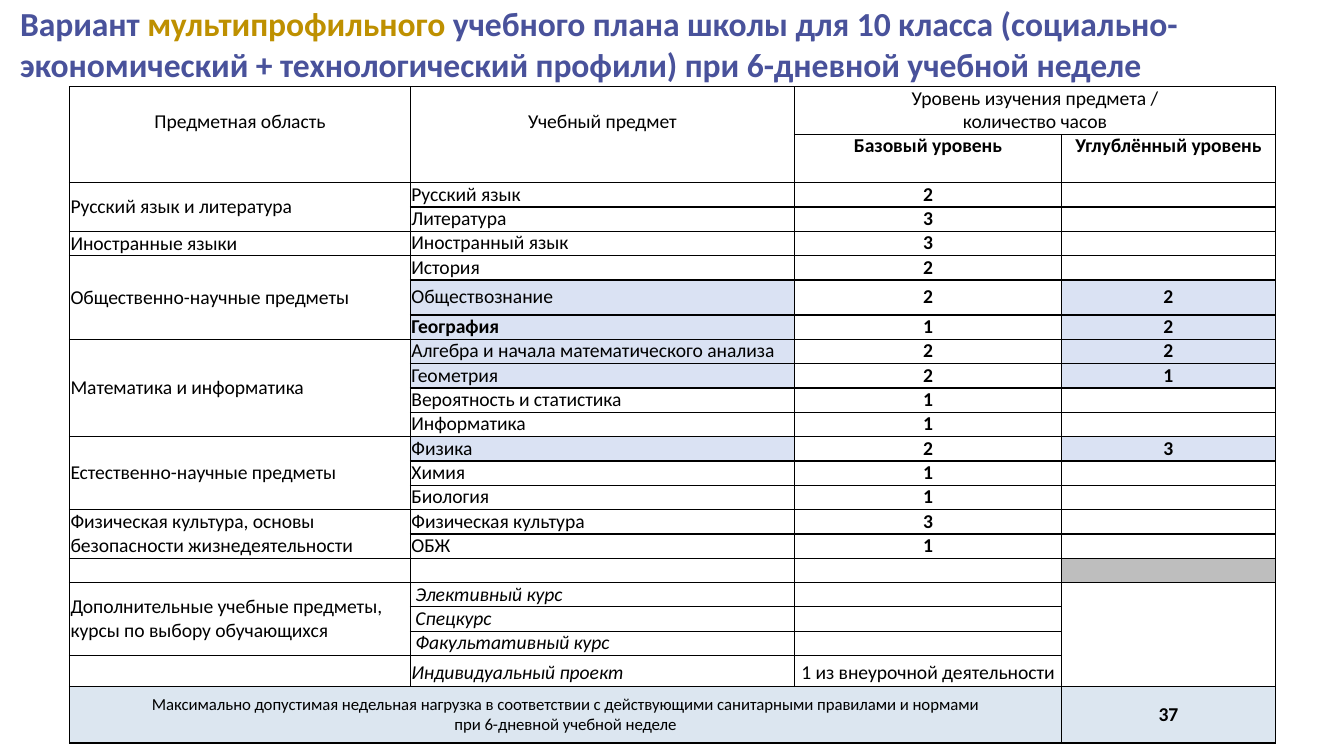
import pptx
import pptx.dml.color
import pptx.enum.text
import pptx.oxml
import pptx.oxml.ns
import pptx.util
from lxml import etree

Pt = pptx.util.Pt
ALIGN = pptx.enum.text.PP_ALIGN
ANCHOR = pptx.enum.text.MSO_ANCHOR
qn = pptx.oxml.ns.qn

# Content
FONT = "Calibri"
COLORS = {"title": "49529B", "accent": "BE9000", "text": "000000", "border": "000000",
          "advanced": "DAE2F3", "blocked": "BEBEBE", "total": "DCE6F0"}
TITLE = [
    [("Вариант ", "title"), ("мультипрофильного ", "accent"),
     ("учебного плана школы для 10 класса (социально-", "title")],
    [("экономический + технологический профили) при 6-дневной учебной неделе", "title")],
]
AREA_HEADER = "Предметная область"
SUBJECT_HEADER = "Учебный предмет"
LEVEL_HEADER = "Уровень изучения предмета /\nколичество часов"
LEVELS = ["Базовый уровень", "Углублённый уровень"]
# Area, then its subjects with basic and advanced hours
AREAS = [
    ("Русский язык и литература", [("Русский язык", "2", ""), ("Литература", "3", "")]),
    ("Иностранные языки", [("Иностранный язык", "3", "")]),
    ("Общественно-научные предметы", [
        ("История", "2", ""), ("Обществознание", "2", "2"), ("География", "1", "2")]),
    ("Математика и информатика", [
        ("Алгебра и начала математического анализа", "2", "2"), ("Геометрия", "2", "1"),
        ("Вероятность и статистика", "1", ""), ("Информатика", "1", "")]),
    ("Естественно-научные предметы", [
        ("Физика", "2", "3"), ("Химия", "1", ""), ("Биология", "1", "")]),
    ("Физическая культура, основы\nбезопасности жизнедеятельности", [
        ("Физическая культура", "3", ""), ("ОБЖ", "1", "")]),
]
BOLD_SUBJECTS = {"География"}
ELECTIVE_AREA = "Дополнительные учебные предметы,\nкурсы по выбору обучающихся"
ELECTIVES = ["Элективный курс", "Спецкурс", "Факультативный курс"]
PROJECT = ("Индивидуальный проект", "1 из внеурочной деятельности")
TOTAL = ("Максимально допустимая недельная нагрузка в соответствии с действующими "
         "санитарными правилами и нормами\vпри 6-дневной учебной неделе", "37")

# Layout
TABLE_LEFT, TABLE_TOP = 49.7, 61.9
COLUMN_WIDTHS = [243.5, 274.3, 190.8, 152.7]
ROW_HEIGHT, HEADER_HEIGHT = 17.4, 34.3
TALL_ROWS = {"Обществознание": 25}
PROJECT_HEIGHT, TOTAL_HEIGHT = 22, 40.5

row_heights = [HEADER_HEIGHT] * 2
for area, subjects in AREAS:
    row_heights += [TALL_ROWS.get(name, ROW_HEIGHT) for name, basic, advanced in subjects]
row_heights += [ROW_HEIGHT] * (1 + len(ELECTIVES)) + [PROJECT_HEIGHT, TOTAL_HEIGHT]


def color(name):
    return pptx.dml.color.RGBColor.from_string(COLORS[name])


def format_run(run, size, color_name="text", bold=False, italic=False):
    font = run.font
    font.name, font.size, font.bold, font.italic = FONT, Pt(size), bold, italic
    font.color.rgb = color(color_name)
    run._r.get_or_add_rPr().set("spc", "-5")


def write(row, column, text, align=ALIGN.LEFT, anchor=ANCHOR.MIDDLE, left=0.7, top=0,
          size=14, bold=False, italic=False, line=None):
    cell = table.cell(row, column)
    cell.margin_left, cell.margin_top = Pt(left), Pt(top)
    cell.vertical_anchor = anchor
    cell.text_frame.text = text
    for paragraph in cell.text_frame.paragraphs:
        paragraph.alignment = align
        if line:
            paragraph.line_spacing = Pt(line)
        for run in paragraph.runs:
            format_run(run, size, bold=bold, italic=italic)


def write_centered(row, column, text, **options):
    write(row, column, text, align=ALIGN.CENTER, left=0, **options)


def shade(row, column, color_name):
    fill = table.cell(row, column).fill
    fill.solid()
    fill.fore_color.rgb = color(color_name)


def merge(row, column, last_row, last_column):
    table.cell(row, column).merge(table.cell(last_row, last_column))


def prepare(cell):
    """Clear the fill and margins, draw the borders, keep empty text small."""
    cell.margin_left = cell.margin_right = cell.margin_top = cell.margin_bottom = 0
    properties = cell._tc.get_or_add_tcPr()
    for side in ("a:lnL", "a:lnR", "a:lnT", "a:lnB"):
        border = etree.SubElement(properties, qn(side), w=str(Pt(1)))
        fill = etree.SubElement(border, qn("a:solidFill"))
        etree.SubElement(fill, qn("a:srgbClr"), val=COLORS["border"])
    cell.fill.background()
    etree.SubElement(cell.text_frame.paragraphs[0]._p, qn("a:endParaRPr"), sz="1200")


presentation = pptx.Presentation()
presentation.slide_width, presentation.slide_height = Pt(960), Pt(540)
slide = presentation.slides.add_slide(presentation.slide_layouts[6])

# Title
title = slide.shapes.add_textbox(Pt(13.7), Pt(0.7), Pt(836), Pt(60)).text_frame
title.word_wrap = True
title.margin_left, title.margin_top = Pt(0.7), Pt(1.5)
title.margin_right = title.margin_bottom = 0
for index, pieces in enumerate(TITLE):
    paragraph = title.add_paragraph() if index else title.paragraphs[0]
    for text, color_name in pieces:
        run = paragraph.add_run()
        run.text = text
        format_run(run, 24, color_name, bold=True)

# Table grid
table = slide.shapes.add_table(
    len(row_heights), len(COLUMN_WIDTHS), Pt(TABLE_LEFT), Pt(TABLE_TOP),
    Pt(sum(COLUMN_WIDTHS)), Pt(sum(row_heights))).table
table.first_row = table.horz_banding = False
for column, width in zip(table.columns, COLUMN_WIDTHS):
    column.width = Pt(width)
for row, height in zip(table.rows, row_heights):
    row.height = Pt(height)
for cell in table.iter_cells():
    prepare(cell)

# Header
for column, text in enumerate([AREA_HEADER, SUBJECT_HEADER]):
    merge(0, column, 1, column)
    write_centered(0, column, text, anchor=ANCHOR.TOP, top=16.5)
merge(0, 2, 0, 3)
write_centered(0, 2, LEVEL_HEADER, line=16.5)
for column, text in enumerate(LEVELS, start=2):
    write_centered(1, column, text, anchor=ANCHOR.TOP, bold=True, line=16.4)

# Subjects grouped by area
row = 2
for area, subjects in AREAS:
    if len(subjects) > 1:
        merge(row, 0, row + len(subjects) - 1, 0)
    write(row, 0, area)
    for name, basic, advanced in subjects:
        write(row, 1, name, bold=name in BOLD_SUBJECTS, line=16.4)
        write_centered(row, 2, basic, bold=True, line=16.4)
        if advanced:
            write_centered(row, 3, advanced, bold=True, line=16.4)
            shade(row, 1, "advanced")
            shade(row, 3, "advanced")
        row += 1

# Separator row, electives and project
shade(row, 3, "blocked")
row += 1
project_row = row + len(ELECTIVES)
merge(row, 0, project_row - 1, 0)
merge(row, 3, project_row, 3)
write(row, 0, ELECTIVE_AREA)
for offset, name in enumerate(ELECTIVES):
    write(row + offset, 1, name, left=3.6, italic=True, line=16.4)
write(project_row, 1, PROJECT[0], anchor=ANCHOR.TOP, top=4.5, italic=True, line=16.6)
write_centered(project_row, 2, PROJECT[1], anchor=ANCHOR.TOP, top=4.5, line=16.6)

# Total
total_row = project_row + 1
merge(total_row, 0, total_row, 2)
write_centered(total_row, 0, TOTAL[0], size=12)
write_centered(total_row, 3, TOTAL[1], bold=True)
shade(total_row, 0, "total")
shade(total_row, 3, "total")

presentation.save("out.pptx")
